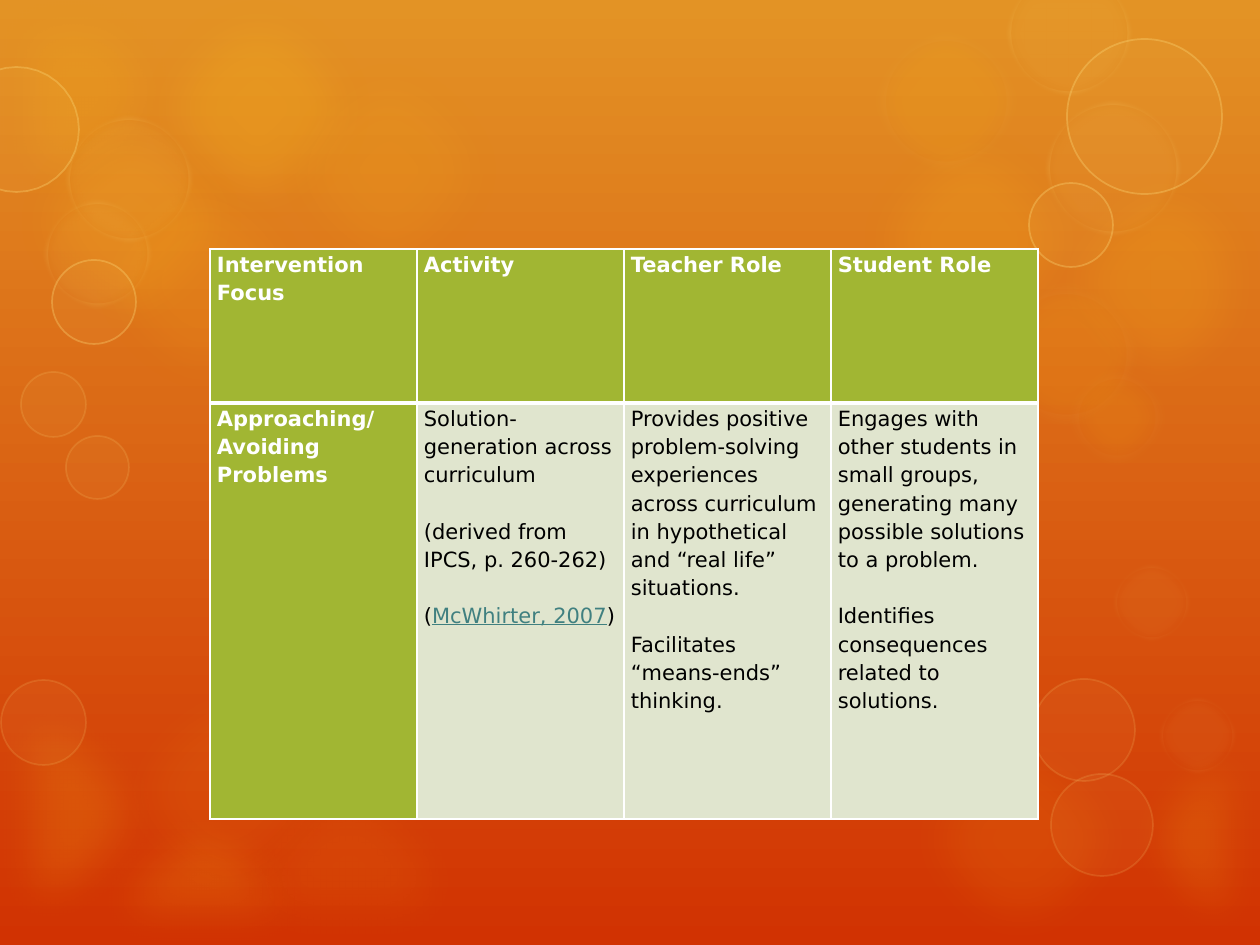
from dataclasses import dataclass
from math import cos, sin, tau

from lxml.etree import SubElement
from pptx import Presentation
from pptx.dml.color import RGBColor
from pptx.enum.shapes import MSO_SHAPE
from pptx.oxml.ns import qn
from pptx.util import Pt

PX = 914400 / 126
WIDE, HIGH, BLEED = 1260, 945, 9


@dataclass(frozen=True)
class Theme:
    font: str = "DejaVu Sans"
    size: int = 12
    lead: float = 1.15
    gap: int = 16
    top: str = "E39325"
    base: str = "D13202"
    gold: str = "FDC61B"
    cream: str = "FEEBAE"
    pale: str = "FFE281"
    green: str = "A1B633"
    mint: str = "E0E5CE"
    white: str = "FFFFFF"
    black: str = "000000"
    link: str = "408080"


@dataclass(frozen=True)
class Look:
    fill: str
    alpha: int
    soft: int = 0
    line: str = ""
    width: int = 0
    fade: int = 0


def emu(px):
    return round(px * PX)


def rgb(code):
    return RGBColor.from_string(code)


class Deck:
    def __init__(self, theme):
        self.theme = theme
        self.file = Presentation()
        self.file.slide_width, self.file.slide_height = emu(WIDE), emu(HIGH)
        self.slide = self.file.slides.add_slide(self.file.slide_layouts[6])

    def back(self):
        fill = self.slide.background.fill
        fill.gradient()
        fill.gradient_angle = 270
        for stop, tone in zip(fill.gradient_stops, (self.theme.top, self.theme.base)):
            stop.color.rgb = rgb(tone)

    def disc(self, x, y, size, look):
        shapes = self.slide.shapes
        inside = (min(x, y) >= -BLEED and x + size <= WIDE + BLEED
                  and y + size <= HIGH + BLEED)
        if inside:
            shape = shapes.add_shape(MSO_SHAPE.OVAL, *map(emu, (x, y, size, size)))
        else:
            shape = self.cut(x, y, size)
        self.paint(shape, look)

    def cut(self, x, y, size):
        half, count = size / 2, 36
        dots = []
        for step in range(count):
            turn = tau * step / count
            across = x + half + half * cos(turn)
            down = y + half + half * sin(turn)
            dots.append((emu(min(max(across, -BLEED), WIDE + BLEED)),
                         emu(min(max(down, -BLEED), HIGH + BLEED))))
        form = self.slide.shapes.build_freeform(*dots[0])
        form.add_line_segments(dots[1:], close=True)
        return form.convert_to_shape()

    def paint(self, shape, look):
        shape.fill.solid()
        shape.fill.fore_color.rgb = rgb(look.fill)
        if look.line:
            shape.line.color.rgb = rgb(look.line)
            shape.line.width = Pt(look.width)
        else:
            shape.line.fill.background()
        shape.shadow.inherit = False
        props = shape._element.spPr
        for tone, part in zip(props.iter(qn("a:srgbClr")), (look.alpha, look.fade)):
            SubElement(tone, qn("a:alpha"), val=str(part * 1000))
        if look.soft:
            SubElement(props.find(qn("a:effectLst")), qn("a:softEdge"),
                       rad=str(Pt(look.soft)))

    def table(self, x, y, cols, rows, data):
        box = tuple(map(emu, (x, y, sum(cols), sum(rows))))
        grid = self.slide.shapes.add_table(len(rows), len(cols), *box).table
        for col, size in zip(grid.columns, cols):
            col.width = emu(size)
        for row, size in zip(grid.rows, rows):
            row.height = emu(size)
        for i, line in enumerate(data):
            for j, text in enumerate(line):
                self.cell(grid.cell(i, j), text, i == 0, j == 0)
        return grid

    def cell(self, cell, text, head, lead):
        theme = self.theme
        bold = head or lead
        cell.margin_left = cell.margin_right = emu(7)
        cell.margin_top = cell.margin_bottom = 0
        edges = {"L": 1, "R": 1, "T": 1 if head else 3, "B": 3 if head else 1}
        for side, width in edges.items():
            line = SubElement(cell._tc.get_or_add_tcPr(), qn(f"a:ln{side}"),
                              w=str(Pt(width)))
            SubElement(SubElement(line, qn("a:solidFill")), qn("a:srgbClr"),
                       val=theme.white)
        cell.fill.solid()
        cell.fill.fore_color.rgb = rgb(theme.green if bold else theme.mint)
        cell.text_frame.text = text
        for i, par in enumerate(cell.text_frame.paragraphs):
            par.line_spacing = theme.lead
            par.space_before = Pt(theme.gap if i else 0)
            for run in par.runs:
                self.type(run, theme.white if bold else theme.black, bold)

    def type(self, run, tone, bold=False, under=False):
        font = run.font
        font.name, font.size = self.theme.font, Pt(self.theme.size)
        font.bold, font.underline = bold, under
        font.color.rgb = rgb(tone)

    def cite(self, par, name):
        theme = self.theme
        for text, tone in ((name, theme.link), (")", theme.black)):
            run = par.add_run()
            run.text = text
            self.type(run, tone, under=tone == theme.link)


theme = Theme()
GLOWS = {
    8: [(97, 660), (218, 751)],
    10: [(72, 151), (258, 39), (890, 708)],
    14: [(-70, -41)],
    15: [(0, 91), (1033, 151), (843, 108)],
    16: [(72, 790), (1110, 708), (-86, 682)],
    20: [(127, -23)],
}
DISCS = [
    (Look(theme.gold, 10, 12, theme.cream, 14, 6), [
        (874, 29, 144), (994, 282, 144), (1067, 367, 100)]),
    (Look(theme.pale, 5, 5, theme.pale, 5, 15), [
        (1113, 564, 77), (1159, 697, 77)]),
    (Look(theme.pale, 5, 5, theme.pale, 5, 30), [
        (66, 116, 126), (44, 200, 107), (1007, -29, 124), (1046, 101, 134)]),
    (Look(theme.pale, 5, 0, theme.pale, 1, 15), [
        (1, 680, 85), (1051, 774, 102), (1033, 679, 102), (21, 372, 65),
        (66, 436, 63)]),
    (Look(theme.pale, 5, 0, theme.pale, 1, 30), [
        (-46, 67, 125), (52, 260, 84), (1067, 39, 155), (1029, 183, 84)]),
]
ROLES = [
    ["Intervention Focus", "Activity", "Teacher Role", "Student Role"],
    ["Approaching/Avoiding Problems",
     "Solution-generation across curriculum\n(derived from IPCS, p. 260-262)\n(",
     "Provides positive problem-solving experiences across curriculum in "
     "hypothetical and “real life” situations.\nFacilitates “means-ends” thinking.",
     "Engages with other students in small groups, generating many possible "
     "solutions to a problem.\nIdentifies consequences related to solutions."],
]


def main():
    deck = Deck(theme)
    deck.back()
    for alpha, spots in GLOWS.items():
        for x, y in spots:
            deck.disc(x, y, 263, Look(theme.gold, alpha, 25))
    for look, spots in DISCS:
        for x, y, size in spots:
            deck.disc(x, y, size, look)
    grid = deck.table(210, 249, [207] * 4, [154, 416], ROLES)
    deck.cite(grid.cell(1, 1).text_frame.paragraphs[-1], "McWhirter, 2007")
    deck.file.save("out.pptx")


if __name__ == "__main__":
    main()
